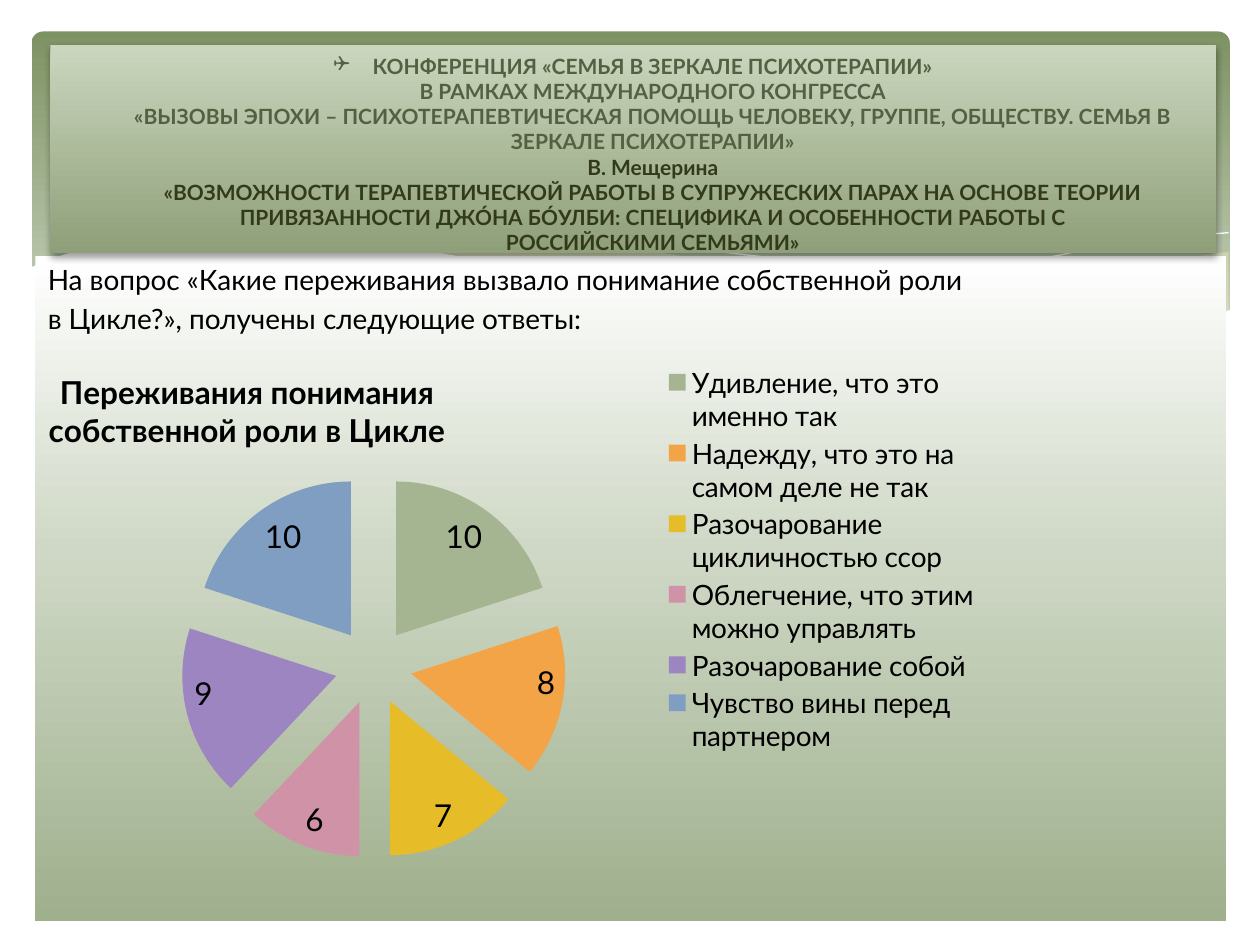
from lxml import etree
from pptx import Presentation
from pptx.chart.data import CategoryChartData
from pptx.dml.color import RGBColor
from pptx.enum.chart import XL_CHART_TYPE, XL_LABEL_POSITION, XL_LEGEND_POSITION
from pptx.enum.shapes import MSO_SHAPE
from pptx.enum.text import MSO_ANCHOR, MSO_AUTO_SIZE, PP_ALIGN
from pptx.oxml.ns import qn
from pptx.util import Pt

PIE = XL_CHART_TYPE.PIE
LABEL_INSIDE_END = XL_LABEL_POSITION.INSIDE_END
LEGEND_RIGHT = XL_LEGEND_POSITION.RIGHT
RECTANGLE = MSO_SHAPE.RECTANGLE
ROUNDED = MSO_SHAPE.ROUNDED_RECTANGLE
TOP = MSO_ANCHOR.TOP
NO_AUTOFIT = MSO_AUTO_SIZE.NONE
LEFT, CENTER = PP_ALIGN.LEFT, PP_ALIGN.CENTER
FONT = "Lato"


def rgb(color):
    return RGBColor.from_string(color)


def fill_downward(shape, stops):
    """Fill with a top-to-bottom gradient of (percent, colour) stops."""
    shape.fill.gradient()
    shape.fill.gradient_angle = 270
    stop_list = shape._element.spPr.find(".//" + qn("a:gsLst"))
    for old_stop in list(stop_list):
        stop_list.remove(old_stop)
    for percent, color in stops:
        stop = etree.SubElement(stop_list, qn("a:gs"), pos=str(percent * 1000))
        etree.SubElement(stop, qn("a:srgbClr"), val=color)


prs = Presentation()
prs.slide_width, prs.slide_height = Pt(720), Pt(540)
slide = prs.slides.add_slide(prs.slide_layouts[5])
shapes = slide.shapes

# Green header panel
panel = shapes.add_shape(ROUNDED, Pt(18), Pt(18), Pt(684.7), Pt(194.4))
panel.adjustments[0] = 0.034
panel.shadow.inherit = False
panel.line.fill.background()
fill_downward(panel, [(0, "7D9263"), (90, "C9D3BE")])

# Waves along the foot of the panel: points, fill, opacity in percent
right_wave = [(702, 144), (652, 151), (582, 166), (525, 178), (476, 191), (524, 197),
              (570, 200), (615, 199), (652, 193), (683, 185), (702, 178)]
middle_wave = [(643, 197), (581, 187), (508, 173), (453, 160), (399, 148), (335, 137),
               (274, 133), (225, 135), (206, 138), (261, 146), (323, 160), (408, 179),
               (479, 192), (548, 199), (603, 200)]
falling_crest = [(222, 140), (279, 135), (352, 137), (438, 147), (523, 163),
                 (598, 181), (653, 196)]
rising_crest = [(441, 185), (500, 169), (580, 151), (634, 140), (675, 135), (702, 133)]
white_foot = [(703, 177), (662, 193), (604, 199), (540, 197), (434, 183), (322, 158),
              (244, 143), (180, 134), (127, 132), (76, 137), (38, 145), (17, 153),
              (17, 237), (703, 237)]
waves = [
    (right_wave, "FEFAC9", 29),
    (middle_wave, "FEFAC9", 40),
    (falling_crest, None, None),
    (rising_crest, None, None),
    (white_foot, "FFFFFF", 100),
]
for points, color, opacity in waves:
    builder = shapes.build_freeform(*points[0], scale=Pt(1))
    builder.add_line_segments(points[1:], close=color is not None)
    wave = builder.convert_to_shape()
    wave.shadow.inherit = False
    if color:
        wave.line.fill.background()
        wave.fill.solid()
        wave.fill.fore_color.rgb = rgb(color)
        tint = wave._element.spPr.find(qn("a:solidFill")).find(qn("a:srgbClr"))
        etree.SubElement(tint, qn("a:alpha"), val=str(opacity * 1000))
    else:
        wave.fill.background()
        wave.line.color.rgb = rgb("FFFFFF")
        wave.line.width = Pt(0)

# Survey question
question = shapes.add_shape(RECTANGLE, Pt(20.2), Pt(146.2), Pt(680.4), Pt(380.2))
question.shadow.inherit = False
question.line.fill.background()
fill_downward(question, [(0, "FFFFFF"), (44, "CFD8C6"), (100, "9FB08D")])
question_text = question.text_frame
question_text.word_wrap = True
question_text.vertical_anchor = TOP
question_lines = [
    "На вопрос «Какие переживания вызвало понимание собственной роли",
    "в Цикле?», получены следующие ответы:",
]
for number, line in enumerate(question_lines):
    paragraph = question_text.add_paragraph() if number else question_text.paragraphs[0]
    paragraph.alignment = LEFT
    if number:
        paragraph.space_before = Pt(3.2)
    run = paragraph.add_run()
    run.text = line
    run.font.name, run.font.size = FONT, Pt(16)
    run.font.color.rgb = rgb("000000")

# Conference title, raised above the panel and the question
title = shapes.title
shapes._spTree.append(title._element)
title.left, title.top, title.width, title.height = Pt(28.8), Pt(25.9), Pt(666), Pt(118.8)
fill_downward(title, [(0, "CBD6BE"), (100, "8E9F79")])
effects = etree.SubElement(title._element.spPr, qn("a:effectLst"))
shadow = etree.SubElement(effects, qn("a:outerShdw"), blurRad=str(Pt(4)),
                          dist=str(Pt(2)), dir="5400000", rotWithShape="0")
shadow_color = etree.SubElement(shadow, qn("a:srgbClr"), val="000000")
etree.SubElement(shadow_color, qn("a:alpha"), val="38000")

title_text = title.text_frame
title_text.word_wrap = True
title_text.auto_size = NO_AUTOFIT
title_text.vertical_anchor = TOP
title_text.margin_top = Pt(4.5)
heading = title_text.paragraphs[0]
heading.alignment = CENTER
heading_props = heading._p.get_or_add_pPr()
heading_props.set("marL", str(Pt(22.5)))
heading_props.set("indent", str(Pt(-22.5)))
etree.SubElement(heading_props, qn("a:buFont"), typeface="Wingdings")
etree.SubElement(heading_props, qn("a:buChar"), char="❑")
CONGRESS, TALK = "536142", "333A1C"
heading_lines = [
    ("КОНФЕРЕНЦИЯ «СЕМЬЯ В ЗЕРКАЛЕ ПСИХОТЕРАПИИ»", CONGRESS),
    ("В РАМКАХ МЕЖДУНАРОДНОГО КОНГРЕССА", CONGRESS),
    ("«ВЫЗОВЫ ЭПОХИ – ПСИХОТЕРАПЕВТИЧЕСКАЯ ПОМОЩЬ ЧЕЛОВЕКУ, ГРУППЕ, ОБЩЕСТВУ. "
     "СЕМЬЯ В ЗЕРКАЛЕ ПСИХОТЕРАПИИ»", CONGRESS),
    ("В. Мещерина", TALK),
    ("«ВОЗМОЖНОСТИ ТЕРАПЕВТИЧЕСКОЙ РАБОТЫ В СУПРУЖЕСКИХ ПАРАХ НА ОСНОВЕ ТЕОРИИ", TALK),
    ("ПРИВЯЗАННОСТИ ДЖО́НА БО́УЛБИ: СПЕЦИФИКА И ОСОБЕННОСТИ РАБОТЫ С", TALK),
    ("РОССИЙСКИМИ СЕМЬЯМИ»", TALK),
]
for number, (line, color) in enumerate(heading_lines):
    if number:
        heading.add_line_break()
    run = heading.add_run()
    run.text = line
    run.font.name, run.font.size, run.font.bold = FONT, Pt(12), True
    run.font.color.rgb = rgb(color)

# Pie of the answers
answers = [
    ("Удивление, что это именно так", 10, "A5B592"),
    ("Надежду, что это на самом деле не так", 8, "F3A447"),
    ("Разочарование цикличностью ссор", 7, "E7BC29"),
    ("Облегчение, что этим можно управлять", 6, "D092A7"),
    ("Разочарование собой", 9, "9C85C0"),
    ("Чувство вины перед партнером", 10, "809EC2"),
]
chart_data = CategoryChartData()
chart_data.categories = [answer for answer, _, _ in answers]
chart_data.add_series("Series 1", [count for _, count, _ in answers])
chart = shapes.add_chart(PIE, Pt(20.2), Pt(196.6), Pt(544.3), Pt(323.3), chart_data).chart
chart.font.name, chart.font.size = FONT, Pt(18)
chart.font.color.rgb = rgb("000000")

chart.has_title = True
chart_title = chart.chart_title.text_frame
for number, line in enumerate(["Переживания понимания", "собственной роли в Цикле"]):
    paragraph = chart_title.add_paragraph() if number else chart_title.paragraphs[0]
    run = paragraph.add_run()
    run.text = line
    run.font.name, run.font.size, run.font.bold = FONT, Pt(18), True
    run.font.color.rgb = rgb("000000")

chart.has_legend = True
chart.legend.position = LEGEND_RIGHT
chart.legend.include_in_layout = False
chart.legend.font.name, chart.legend.font.size = FONT, Pt(16)
chart.legend.font.color.rgb = rgb("000000")

plot = chart.plots[0]
plot.vary_by_categories = True
plot.has_data_labels = True
plot.data_labels.show_value = True
plot.data_labels.show_percentage = False
plot.data_labels.position = LABEL_INSIDE_END
plot.data_labels.font.name, plot.data_labels.font.size = FONT, Pt(18)
plot.data_labels.font.color.rgb = rgb("000000")
series = plot.series[0]
for number, (_, _, color) in enumerate(answers):
    slice_fill = series.points[number].format.fill
    slice_fill.solid()
    slice_fill.fore_color.rgb = rgb(color)
explosion = etree.Element(qn("c:explosion"), val="25")
series._element.find(qn("c:tx")).addnext(explosion)

# Places of the chart parts, as shares of the chart: child index, then x, y, w, h
chart_parts = [
    ("c:title", 1, {"x": 0.01, "y": 0.04}),
    ("c:plotArea", 0, {"x": 0.06, "y": 0.23, "w": 0.59, "h": 0.68}),
    ("c:legend", 1, {"x": 0.66, "y": 0.03, "w": 0.33, "h": 0.7}),
]
for tag, index, place in chart_parts:
    part = chart._chartSpace.chart.find(qn(tag))
    for old_layout in part.findall(qn("c:layout")):
        part.remove(old_layout)
    layout = etree.Element(qn("c:layout"))
    manual = etree.SubElement(layout, qn("c:manualLayout"))
    if tag == "c:plotArea":
        etree.SubElement(manual, qn("c:layoutTarget"), val="inner")
    for axis in "xy":
        etree.SubElement(manual, qn(f"c:{axis}Mode"), val="edge")
    for side, share in place.items():
        etree.SubElement(manual, qn(f"c:{side}"), val=str(share))
    part.insert(index, layout)

prs.save("out.pptx")
